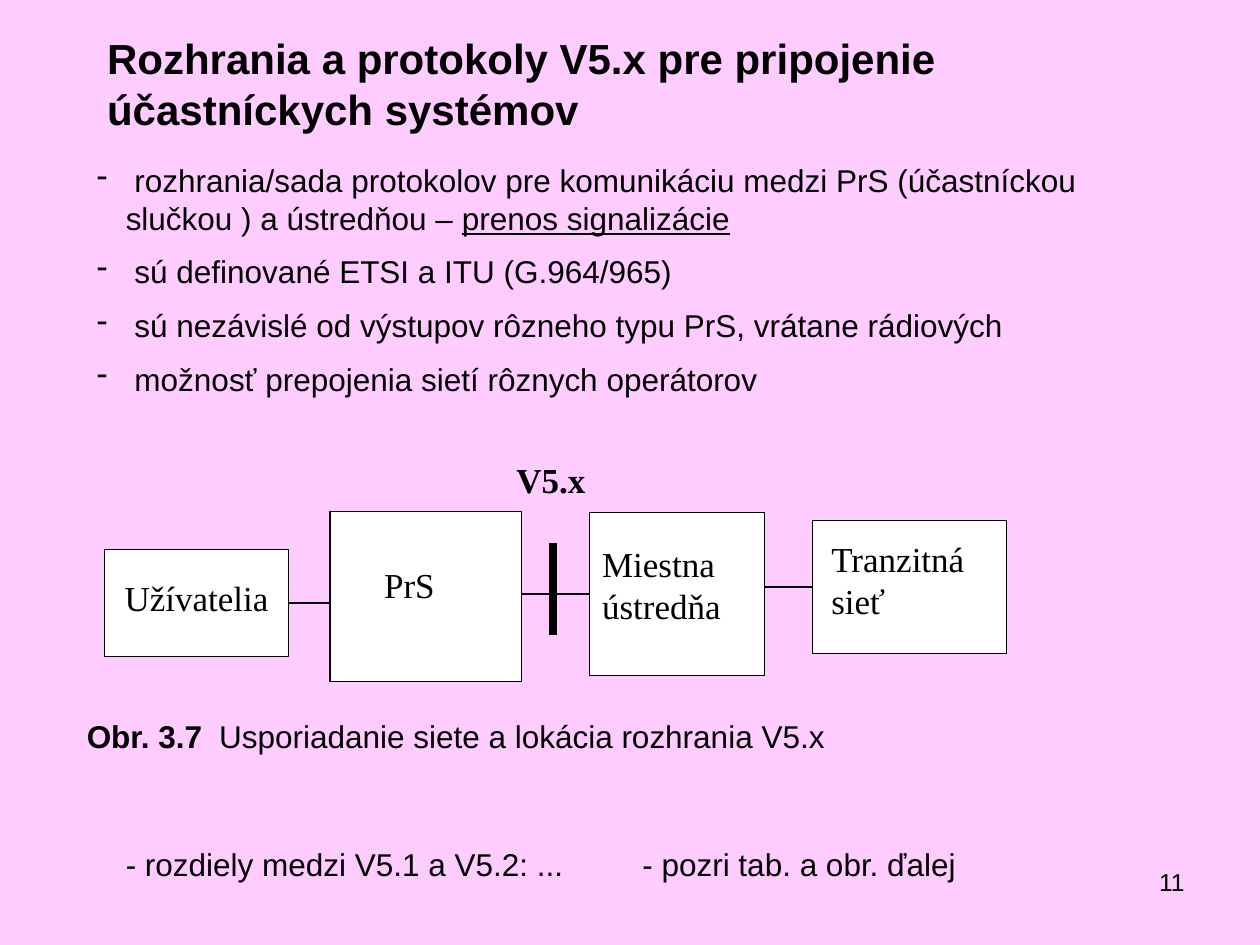
from dataclasses import dataclass

from lxml import etree
from pptx import Presentation
from pptx.dml.color import RGBColor
from pptx.enum.shapes import MSO_CONNECTOR, MSO_SHAPE
from pptx.enum.text import MSO_ANCHOR, MSO_AUTO_SIZE, PP_ALIGN
from pptx.oxml.ns import qn
from pptx.util import Inches, Pt

RECT, STRAIGHT = MSO_SHAPE.RECTANGLE, MSO_CONNECTOR.STRAIGHT
TOP, NO_FIT = MSO_ANCHOR.TOP, MSO_AUTO_SIZE.NONE
LEFT, RIGHT = PP_ALIGN.LEFT, PP_ALIGN.RIGHT
SIDE_LEFT, SIDE_RIGHT = 1, 3
COLORS = {"background": "FFCCFF", "box": "FFFFFF", "ink": "000000"}
SANS, SERIF = "Arial", "Times New Roman"
WIDTH, HEIGHT = Inches(10), Inches(7.5)
COLS, ROWS = 100, 75
INDENT = 2.3


@dataclass(frozen=True)
class Area:
    col: float
    row: float
    cols: float
    rows: float

    def emu(self) -> tuple:
        return x(self.col), y(self.row), x(self.cols), y(self.rows)


@dataclass(frozen=True)
class Run:
    text: str
    bold: bool = False
    underline: bool = False


@dataclass(frozen=True)
class Label:
    area: Area
    paragraphs: tuple
    size: int = 18
    font: str = SANS
    align: PP_ALIGN = LEFT
    dash: bool = False
    tab: float = 0


@dataclass(frozen=True)
class Node:
    area: Area
    text: str
    text_area: Area


@dataclass(frozen=True)
class Link:
    start: int
    end: int
    join_start: bool = False


TITLE = Label(
    Area(7.5, 2.1, 85.1, 9),
    ((Run("Rozhrania a protokoly V5.x pre pripojenie účastníckych systémov", bold=True),),),
    24,
)
LABELS = (
    Label(Area(71.7, 68.3, 23.3, 5.2), ((Run("11"),),), 14, align=RIGHT),
    Label(
        Area(5.9, 56.4, 85.1, 4),
        ((Run("Obr. 3.7", bold=True), Run("\tUsporiadanie siete a lokácia rozhrania V5.x")),),
        tab=10.5,
    ),
    Label(Area(40, 35.9, 7.9, 5.6), ((Run("V5.x", bold=True),),), 20, SERIF),
    Label(
        Area(6.7, 12.3, 82.7, 20.7),
        (
            (
                Run(" rozhrania/sada protokolov pre komunikáciu medzi PrS (účastníckou slučkou ) a ústredňou – "),
                Run("prenos signalizácie", underline=True),
            ),
            (Run(" sú definované ETSI a ITU (G.964/965)"),),
            (Run(" sú nezávislé od výstupov rôzneho typu PrS, vrátane rádiových"),),
            (Run(" možnosť prepojenia sietí rôznych operátorov"),),
        ),
        dash=True,
    ),
    Label(
        Area(9, 66.6, 75.6, 4),
        ((Run("- rozdiely medzi V5.1 a V5.2: ...\t- pozri tab. a obr. ďalej"),),),
        tab=41,
    ),
)
NODES = (
    Node(Area(8.3, 43.6, 14.6, 8.5), "Užívatelia", Area(8.9, 45.3, 13.6, 5.6)),
    Node(Area(26.2, 40.6, 15.2, 13.5), "PrS", Area(29.5, 44.2, 11.6, 5.5)),
    Node(Area(46.8, 40.7, 13.9, 12.9), "Miestna ústredňa", Area(46.8, 42.6, 13.7, 9.2)),
    Node(Area(64.5, 41.3, 15.4, 10.6), "Tranzitná sieť", Area(65, 42.2, 13.6, 9.4)),
)
LINKS = (Link(0, 1, join_start=True), Link(1, 2), Link(2, 3))
INTERFACE_COL, INTERFACE_TOP, INTERFACE_BOTTOM = 43.9, 43.1, 50.4


def x(cols: float) -> int:
    return round(WIDTH * cols / COLS)


def y(rows: float) -> int:
    return round(HEIGHT * rows / ROWS)


def color(name: str) -> RGBColor:
    return RGBColor.from_string(COLORS[name])


def write(sp, label: Label) -> None:
    sp.left, sp.top, sp.width, sp.height = label.area.emu()
    tf = sp.text_frame
    tf.word_wrap, tf.auto_size, tf.vertical_anchor = True, NO_FIT, TOP
    for i, runs in enumerate(label.paragraphs):
        p = tf.add_paragraph() if i else tf.paragraphs[0]
        p.alignment = label.align
        p.space_before = Pt(label.size / 2 if i else 0)
        pPr = p._p.get_or_add_pPr()
        if label.dash:
            pPr.set("marL", str(x(INDENT)))
            pPr.set("indent", str(-x(INDENT)))
            etree.SubElement(pPr, qn("a:buChar"), char="-")
        if label.tab:
            tabs = etree.SubElement(pPr, qn("a:tabLst"))
            etree.SubElement(tabs, qn("a:tab"), pos=str(x(label.tab)), algn="l")
        for run in runs:
            r = p.add_run()
            r.text = run.text
            r.font.name, r.font.size = label.font, Pt(label.size)
            r.font.bold, r.font.underline = run.bold, run.underline
            r.font.color.rgb = color("ink")


def add_label(s, label: Label) -> None:
    write(s.shapes.add_textbox(*label.area.emu()), label)


def add_box(s, node: Node):
    sp = s.shapes.add_shape(RECT, *node.area.emu())
    sp.shadow.inherit = False
    sp.fill.solid()
    sp.fill.fore_color.rgb = color("box")
    sp.line.color.rgb = color("ink")
    sp.line.width = Pt(0.75)
    return sp


def add_line(s, x1: int, y1: int, x2: int, y2: int, width: float):
    c = s.shapes.add_connector(STRAIGHT, x1, y1, x2, y2)
    c.line.color.rgb = color("ink")
    c.line.width = Pt(width)
    etree.SubElement(c._element.spPr, qn("a:effectLst"))
    return c


def add_link(s, link: Link, boxes: list) -> None:
    start, end = boxes[link.start], boxes[link.end]
    joined = start if link.join_start else end
    level = joined.top + joined.height // 2
    c = add_line(s, start.left + start.width, level, end.left, level, 0.75)
    if link.join_start:
        c.begin_connect(start, SIDE_RIGHT)
    else:
        c.end_connect(end, SIDE_LEFT)


def main() -> None:
    """Build the slide on V5.x interfaces and save it."""
    prs = Presentation()
    prs.slide_width, prs.slide_height = WIDTH, HEIGHT
    s = prs.slides.add_slide(prs.slide_layouts[5])
    s.background.fill.solid()
    s.background.fill.fore_color.rgb = color("background")
    write(s.shapes.title, TITLE)
    boxes = [add_box(s, node) for node in NODES]
    for node in NODES:
        add_label(s, Label(node.text_area, ((Run(node.text),),), 20, SERIF))
    for link in LINKS:
        add_link(s, link, boxes)
    add_line(s, x(INTERFACE_COL), y(INTERFACE_TOP), x(INTERFACE_COL), y(INTERFACE_BOTTOM), 5)
    for label in LABELS:
        add_label(s, label)
    prs.save("out.pptx")


if __name__ == "__main__":
    main()
